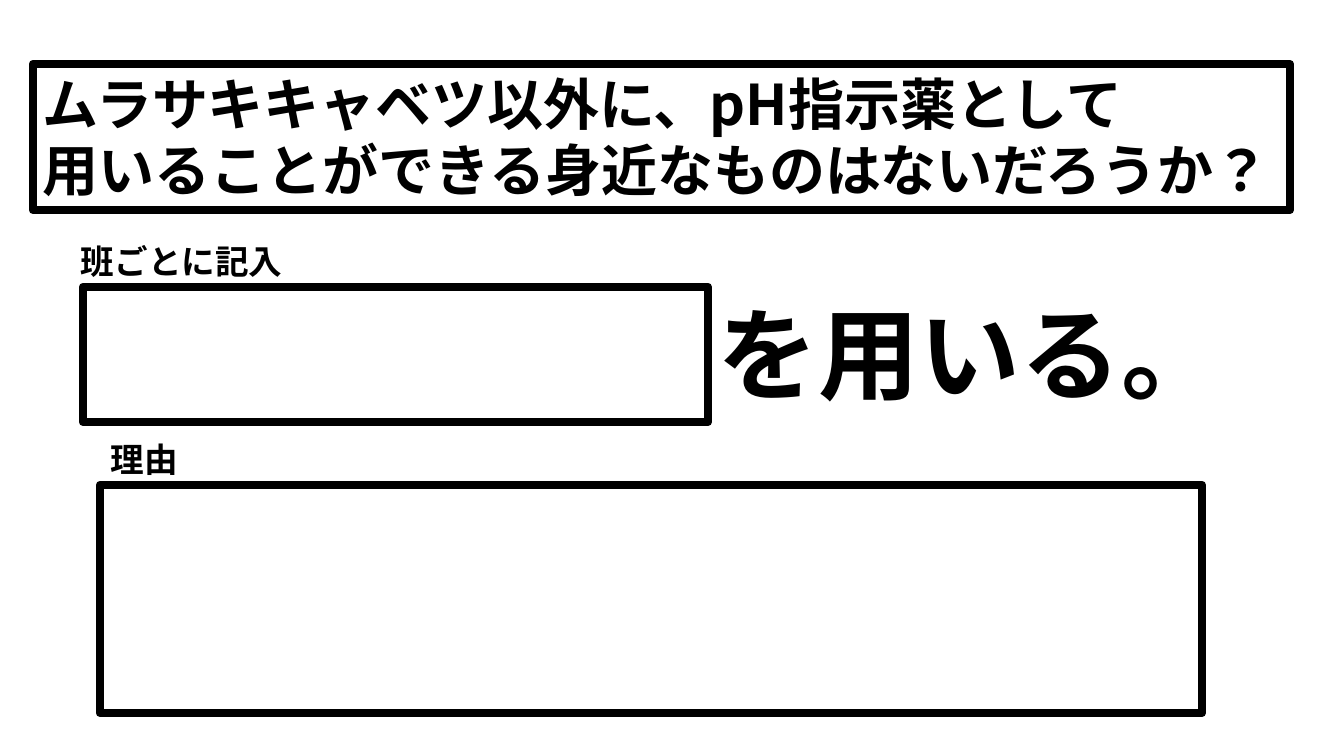
import lxml.etree
import pptx
import pptx.dml.color
import pptx.enum.lang
import pptx.enum.shapes
import pptx.enum.text
import pptx.oxml.ns
import pptx.util

PX = 914400 / 100.8
THEME = {
    "font": "Noto Sans CJK JP",
    "ink": pptx.dml.color.RGBColor(0, 0, 0),
    "border": 6,
    "title": 40,
    "label": 24,
    "answer": 72,
    "leading": 1.18,
}


def px(*lengths):
    return [pptx.util.Emu(round(length * PX)) for length in lengths]


def write(box, lines, size, top_inset, anchor):
    """Fill a box with bold lines, one paragraph each, at a fixed line height."""
    frame = box.text_frame
    frame.word_wrap = True
    frame.vertical_anchor = anchor
    frame.margin_left, frame.margin_right, frame.margin_top, frame.margin_bottom = px(10, 10, top_inset, 5)
    for index, line in enumerate(lines):
        para = frame.add_paragraph() if index else frame.paragraphs[0]
        para.alignment = pptx.enum.text.PP_ALIGN.LEFT
        para.line_spacing = pptx.util.Pt(round(size * THEME["leading"]))
        span = para.add_run()
        span.text = line
        span.font.name = THEME["font"]
        span.font.size = pptx.util.Pt(size)
        span.font.bold = True
        span.font.color.rgb = THEME["ink"]
        span.font.language_id = pptx.enum.lang.MSO_LANGUAGE_ID.JAPANESE
        # Japanese glyphs take their typeface from the East Asian slot
        east_asian = lxml.etree.SubElement(span.font._element, pptx.oxml.ns.qn("a:ea"))
        east_asian.set("typeface", THEME["font"])


deck = pptx.Presentation()
deck.slide_width, deck.slide_height = px(1344, 756)
page = deck.slides.add_slide(deck.slide_layouts[6])

question_place = (33, 64, 1257, 146)
answer_place = (83, 287, 625, 135)
reason_place = (100, 485, 1102, 228)
boxes = []
for place in (question_place, answer_place, reason_place):
    box = page.shapes.add_shape(pptx.enum.shapes.MSO_SHAPE.RECTANGLE, *px(*place))
    box.shadow.inherit = False
    box.fill.background()
    box.line.color.rgb = THEME["ink"]
    box.line.width = pptx.util.Pt(THEME["border"])
    boxes.append(box)

question = ["ムラサキキャベツ以外に、pH指示薬として", "用いることができる身近なものはないだろうか？"]
write(boxes[0], question, THEME["title"], 4, pptx.enum.text.MSO_ANCHOR.MIDDLE)

captions = [
    ("班ごとに記入", (71, 236, 243, 50), THEME["label"], 6),
    ("を用いる。", (708, 286, 539, 132), THEME["answer"], 8),
    ("理由", (101, 434, 243, 50), THEME["label"], 6),
]
for wording, place, size, top_inset in captions:
    caption = page.shapes.add_textbox(*px(*place))
    write(caption, [wording], size, top_inset, pptx.enum.text.MSO_ANCHOR.TOP)

deck.save("out.pptx")
